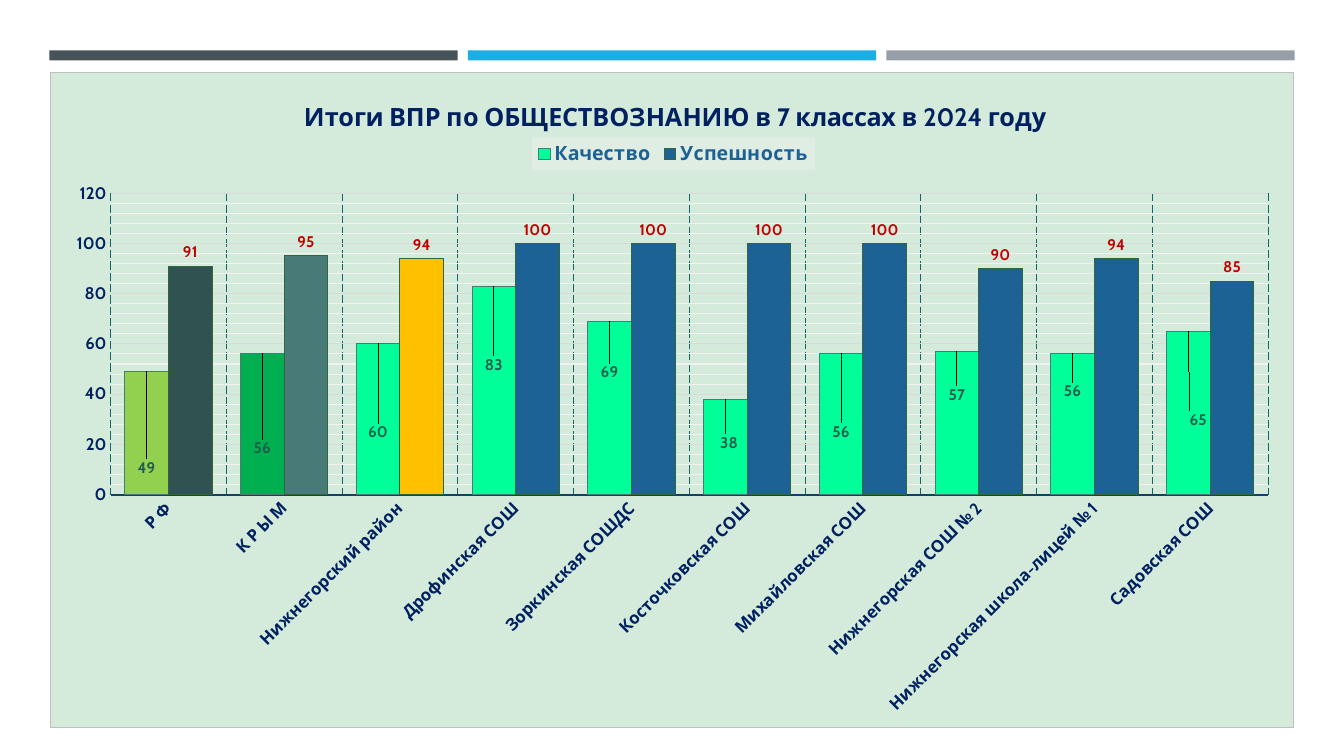
from dataclasses import dataclass
from typing import Optional

from lxml.etree import SubElement
from pptx import Presentation
from pptx.chart.data import CategoryChartData
from pptx.dml.color import RGBColor
from pptx.enum.chart import XL_CHART_TYPE as ChartType
from pptx.enum.chart import XL_LABEL_POSITION as LabelPosition
from pptx.enum.chart import XL_LEGEND_POSITION as LegendPosition
from pptx.enum.chart import XL_TICK_MARK as TickMark
from pptx.enum.dml import MSO_LINE_DASH_STYLE as DashStyle
from pptx.enum.shapes import MSO_SHAPE as Shape
from pptx.oxml import parse_xml
from pptx.oxml.ns import nsdecls, qn
from pptx.util import Inches, Pt

FONT = "Cabin"
COLORS = {
    "slate": "465359", "sky": "1CADE4", "gray": "969FA7",
    "panel": "D4EBDB", "panel_border": "BFBFBF", "legend_panel": "DFEDE3",
    "navy": "002060", "legend_text": "1D6294", "black": "000000",
    "axis": "134163", "category_grid": "13676C",
    "value_grid": "D9D9D9", "minor_grid": "F2F2F2",
    "mint": "00FF99", "lime": "92D050", "green": "00B050",
    "blue": "1D6294", "dark_teal": "305250", "teal": "487B78", "amber": "FFC000",
    "quality_line": "487B78", "success_line": "2F663E",
    "quality_label": "215D4C", "success_label": "C00000",
}
AXIS_MAXIMUM = 120
PLOT_HEIGHT = 0.46
LABEL_RISE = 5.3


@dataclass
class Bar:
    left: float
    color: str


@dataclass
class School:
    name: str
    quality: int
    success: int
    label_height: float
    label_shift: float = 0


@dataclass
class SeriesStyle:
    fill: str
    line: str
    label: str
    points: list[str]


@dataclass
class Layout:
    x: float
    y: float
    width: Optional[float] = None
    height: Optional[float] = None
    inner: bool = False


BARS = [Bar(0.49, "slate"), Bar(4.64, "sky"), Bar(8.79, "gray")]
SCHOOLS = [
    School("Р Ф", 49, 91, 10.4),
    School("К Р Ы М", 56, 95, 18.3),
    School("Нижнегорский район", 60, 94, 24.7),
    School("Дрофинская СОШ", 83, 100, 51.4),
    School("Зоркинская СОШДС", 69, 100, 48.6),
    School("Косточковская СОШ", 38, 100, 20.7, 0.003),
    School("Михайловская СОШ", 56, 100, 24.7),
    School("Нижнегорская СОШ № 2", 57, 90, 39.5),
    School("Нижнегорская школа-лицей № 1", 56, 94, 41),
    School("Садовская СОШ", 65, 85, 29.5, 0.008),
]
STYLES = [
    SeriesStyle("mint", "quality_line", "quality_label", ["lime", "green"]),
    SeriesStyle("blue", "success_line", "success_label",
                ["dark_teal", "teal", "amber"]),
]


def rgb(name: str) -> RGBColor:
    return RGBColor.from_string(COLORS[name])


def set_font(font, size: float, color: str, bold: bool = True) -> None:
    font.name = FONT
    font.size = Pt(size)
    font.bold = bold
    font.color.rgb = rgb(color)


def set_line(line, color: str, width: float = 0.75) -> None:
    line.color.rgb = rgb(color)
    line.width = Pt(width)


def set_bar_format(target, fill: str, line: str) -> None:
    target.format.fill.solid()
    target.format.fill.fore_color.rgb = rgb(fill)
    set_line(target.format.line, line)


def set_layout(parent, layout: Layout, position: int) -> None:
    for existing in parent.findall(qn("c:layout")):
        parent.remove(existing)
    element = parse_xml(f"<c:layout {nsdecls('c')}><c:manualLayout/></c:layout>")
    mode = None if parent.tag == qn("c:dLbl") else "edge"
    settings = {"layoutTarget": "inner" if layout.inner else None,
                "xMode": mode, "yMode": mode, "x": layout.x, "y": layout.y,
                "w": layout.width, "h": layout.height}
    for name, value in settings.items():
        if value is not None:
            SubElement(element[0], qn(f"c:{name}")).set("val", str(value))
    parent.insert(position, element)


def shape_properties(fill: Optional[str] = None, line: Optional[str] = None):
    def paint(color: Optional[str]) -> str:
        if color is None:
            return "<a:noFill/>"
        return f'<a:solidFill><a:srgbClr val="{COLORS[color]}"/></a:solidFill>'

    return parse_xml(f'<c:spPr {nsdecls("c", "a")}>{paint(fill)}'
                     f'<a:ln w="{Pt(0.75)}">{paint(line)}</a:ln></c:spPr>')


def style_series(series, style: SeriesStyle) -> None:
    set_bar_format(series, style.fill, style.line)
    for index, color in enumerate(style.points):
        set_bar_format(series.points[index], color, style.line)
    labels = series.data_labels
    labels.show_value = True
    labels.number_format = "0"
    labels.number_format_is_linked = False
    labels.position = LabelPosition.OUTSIDE_END
    set_font(labels.font, 11, style.label)


def move_quality_labels(series, style: SeriesStyle) -> None:
    for index, school in enumerate(SCHOOLS):
        label = series.points[index].data_label
        label.position = LabelPosition.OUTSIDE_END
        set_font(label.font, 11, style.label)
    for school, element in zip(SCHOOLS, series.data_labels._element.findall(qn("c:dLbl"))):
        drop = school.quality + LABEL_RISE - school.label_height
        offset = round(drop * PLOT_HEIGHT / AXIS_MAXIMUM, 3)
        set_layout(element, Layout(school.label_shift, offset), 1)


def style_axes(chart) -> None:
    category, value = chart.category_axis, chart.value_axis
    for axis in (category, value):
        axis.major_tick_mark = axis.minor_tick_mark = TickMark.NONE
        axis.has_major_gridlines = True
        set_font(axis.tick_labels.font, 12, "navy")
    set_line(category.format.line, "axis", 1.5)
    category_grid = category.major_gridlines.format.line
    set_line(category_grid, "category_grid")
    category_grid.dash_style = DashStyle.LONG_DASH
    category._element.find(f"{qn('c:txPr')}/{qn('a:bodyPr')}").set("rot", "-2700000")
    value.minimum_scale, value.maximum_scale = 0, AXIS_MAXIMUM
    value.major_unit, value.minor_unit = 20, 4
    value.tick_labels.number_format = "0"
    value.tick_labels.number_format_is_linked = False
    value.format.line.fill.background()
    set_line(value.major_gridlines.format.line, "value_grid")
    value.has_minor_gridlines = True
    minor_gridlines = value._element.find(qn("c:minorGridlines"))
    minor_gridlines.append(shape_properties(line="minor_grid"))


def add_results_chart(slide) -> None:
    data = CategoryChartData(number_format="0")
    data.categories = [school.name for school in SCHOOLS]
    data.add_series("Качество", [school.quality for school in SCHOOLS])
    data.add_series("Успешность", [school.success for school in SCHOOLS])
    chart = slide.shapes.add_chart(
        ChartType.COLUMN_CLUSTERED, Inches(0.5), Inches(0.71),
        Inches(12.33), Inches(6.51), data).chart
    set_font(chart.font, 10, "black", False)
    chart.has_title = True
    paragraph = chart.chart_title.text_frame.paragraphs[0]
    paragraph.text = "Итоги ВПР по ОБЩЕСТВОЗНАНИЮ в 7 классах в 2024 году"
    set_font(paragraph.font, 18, "navy")
    set_layout(chart.chart_title._element, Layout(0.2, 0.035), 1)

    chart.has_legend = True
    legend = chart.legend
    legend.position = LegendPosition.TOP
    legend.include_in_layout = False
    set_font(legend.font, 14, "legend_text")
    set_layout(legend._element, Layout(0.387, 0.1, 0.228, 0.05), 1)
    legend._element.find(qn("c:overlay")).addnext(shape_properties("legend_panel"))

    plot = chart.plots[0]
    plot.gap_width, plot.overlap = 65, 0
    plot.vary_by_categories = False
    for series, style in zip(plot.series, STYLES):
        style_series(series, style)
    move_quality_labels(plot.series[0], STYLES[0])
    style_axes(chart)
    chart_element = chart._chartSpace.find(qn("c:chart"))
    set_layout(chart_element.find(qn("c:plotArea")),
               Layout(0.048, 0.185, 0.932, PLOT_HEIGHT, True), 0)
    chart_element.addnext(shape_properties("panel", "panel_border"))


def add_bar(slide, bar: Bar) -> None:
    shape = slide.shapes.add_shape(
        Shape.RECTANGLE, Inches(bar.left), Inches(0.5), Inches(4.05), Inches(0.1))
    shape.shadow.inherit = False
    shape.fill.solid()
    shape.fill.fore_color.rgb = rgb(bar.color)
    shape.line.fill.background()


presentation = Presentation()
presentation.slide_width, presentation.slide_height = Inches(13.33), Inches(7.5)
slide = presentation.slides.add_slide(presentation.slide_layouts[6])
for bar in BARS:
    add_bar(slide, bar)
add_results_chart(slide)
presentation.save("out.pptx")
